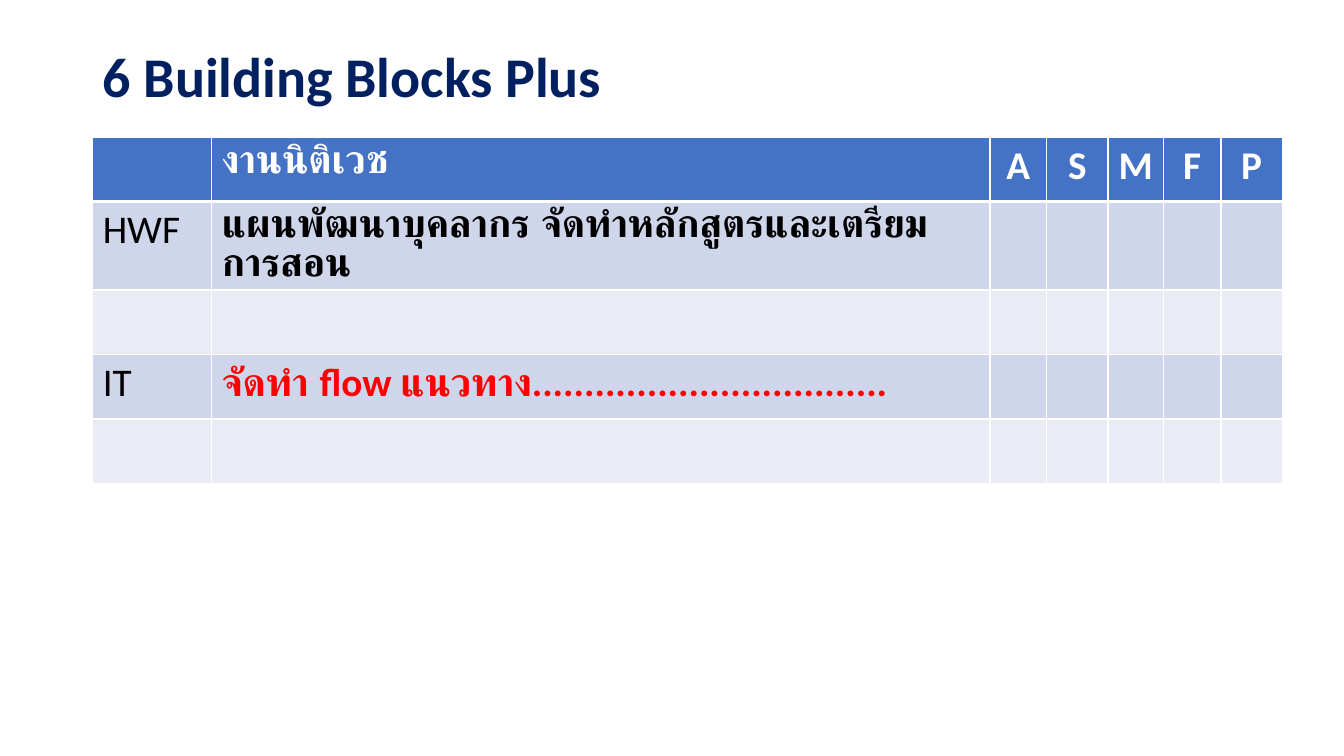
from dataclasses import dataclass

from lxml import etree
from pptx import Presentation
from pptx import util as u
from pptx.dml.color import RGBColor
from pptx.enum import text
from pptx.oxml.ns import qn


@dataclass(frozen=True)
class Theme:
    font: str = "Calibri"
    title_size: int = 40
    cell_size: int = 28
    navy: str = "002060"
    header: str = "4472C4"
    bands: tuple = ("CFD5EA", "E9EBF5")
    white: str = "FFFFFF"
    black: str = "000000"
    red: str = "FF0000"
    thin: int = 1
    thick: int = 3


class SlideBuilder:
    def __init__(self, prs, theme):
        self.theme = theme
        self.s = prs.slides.add_slide(prs.slide_layouts[5])

    def run(self, p, words, size, color, bold):
        r = p.add_run()
        r.text = words
        r.font.name = self.theme.font
        r.font.size = u.Pt(size)
        r.font.bold = bold
        r.font.color.rgb = RGBColor.from_string(color)

    def title(self, words, box):
        sp = self.s.shapes.title
        sp.left, sp.top, sp.width, sp.height = map(u.Inches, box)
        tf = sp.text_frame
        tf.word_wrap = True
        tf.auto_size = text.MSO_AUTO_SIZE.NONE
        tf.vertical_anchor = text.MSO_ANCHOR.MIDDLE
        p = tf.paragraphs[0]
        p.alignment = text.PP_ALIGN.LEFT
        p.line_spacing = 0.9
        self.run(p, words, self.theme.title_size, self.theme.navy, True)

    def borders(self, cell, widths):
        tc_pr = cell._tc.get_or_add_tcPr()
        for side, width in zip("LRTB", widths):
            ln = etree.SubElement(tc_pr, qn(f"a:ln{side}"), w=str(u.Pt(width)))
            fill = etree.SubElement(ln, qn("a:solidFill"))
            etree.SubElement(fill, qn("a:srgbClr"), val=self.theme.white)

    def cell(self, cell, row, col, words, color):
        th = self.theme
        top = th.thick if row == 1 else th.thin
        bottom = th.thick if row == 0 else th.thin
        self.borders(cell, (th.thin, th.thin, top, bottom))
        cell.fill.solid()
        fill = th.bands[(row - 1) % 2] if row else th.header
        cell.fill.fore_color.rgb = RGBColor.from_string(fill)
        p = cell.text_frame.paragraphs[0]
        if row == 0 and col > 1:
            p.alignment = text.PP_ALIGN.CENTER
        if words:
            self.run(p, words, th.cell_size, color, row == 0 or col > 0)
        else:
            p.font.size = u.Pt(th.cell_size)

    def table(self, left, top, widths, heights, rows, colors):
        frame = self.s.shapes.add_table(
            len(heights), len(widths), u.Inches(left), u.Inches(top),
            u.Inches(sum(widths)), u.Inches(sum(heights)))
        table = frame.table
        for column, width in zip(table.columns, widths):
            column.width = u.Inches(width)
        for row, height in zip(table.rows, heights):
            row.height = u.Inches(height)
        for i, row in enumerate(rows):
            for j in range(len(widths)):
                words = row[j] if j < len(row) else ""
                default = self.theme.black if i else self.theme.white
                self.cell(table.cell(i, j), i, j, words,
                          colors.get((i, j), default))


def main():
    prs = Presentation()
    prs.slide_width = u.Inches(13.33)
    prs.slide_height = u.Inches(7.5)
    theme = Theme()
    slide = SlideBuilder(prs, theme)
    slide.title("6 Building Blocks Plus", (0.92, 0.4, 11.5, 0.77))
    rows = [
        ["", "งานนิติเวช", *"ASMFP"],
        ["HWF", "แผนพัฒนาบุคลากร จัดทำหลักสูตรและเตรียมการสอน"],
        [],
        ["IT", "จัดทำ flow แนวทาง.................................."],
        [],
    ]
    slide.table(0.92, 1.36, [1.18, 7.72, 0.56, 0.61, 0.55, 0.57, 0.61],
                [0.64, 0.57, 0.64, 0.64, 0.64], rows, {(3, 1): theme.red})
    prs.save("out.pptx")


if __name__ == "__main__":
    main()
